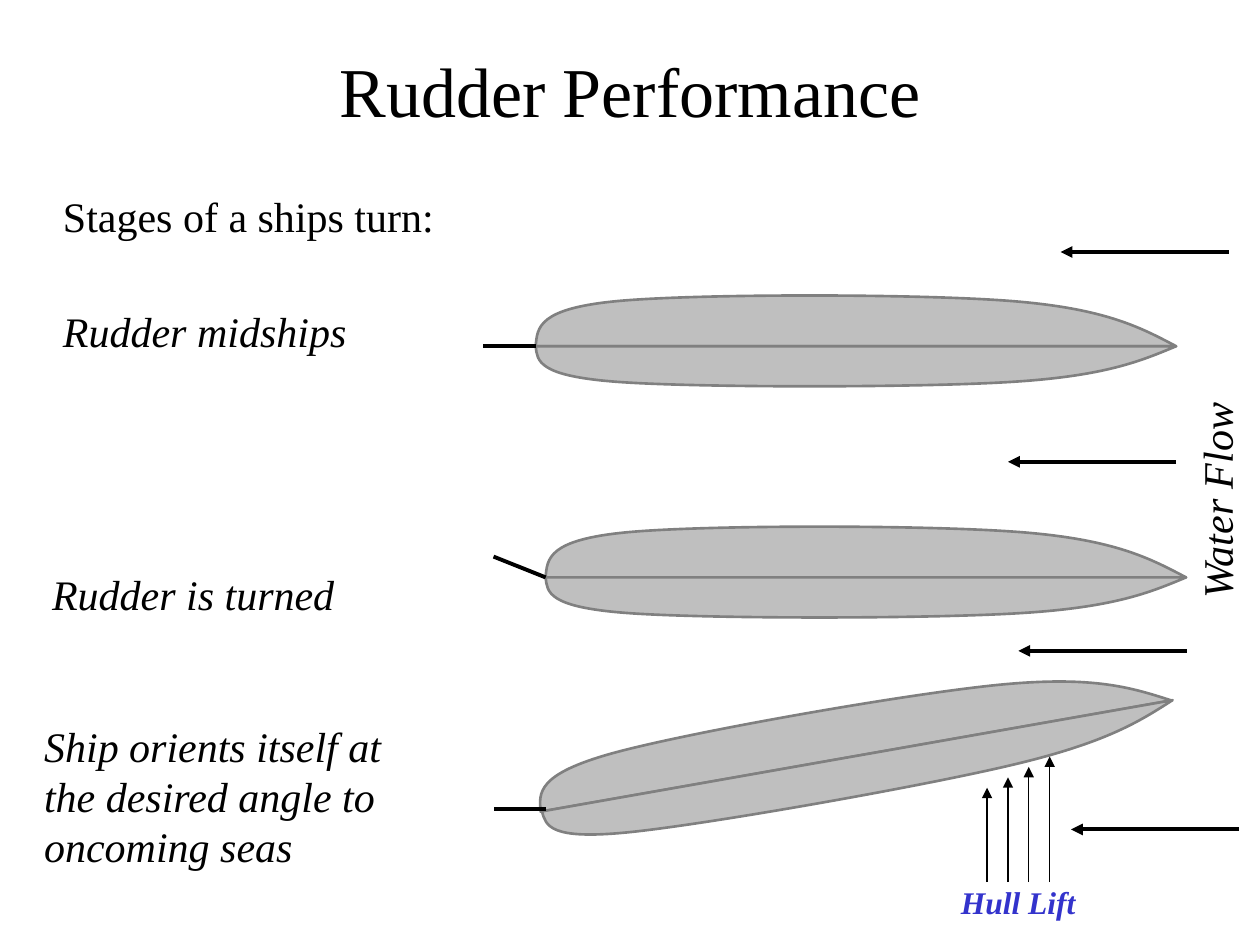
"""Build the Rudder Performance slide showing the stages of a ship's turn."""
from lxml import etree
from pptx import Presentation
from pptx.dml.color import RGBColor
from pptx.enum.shapes import MSO_CONNECTOR
from pptx.enum.text import MSO_ANCHOR, MSO_AUTO_SIZE, PP_ALIGN
from pptx.oxml.ns import qn
from pptx.util import Cm, Pt

STRAIGHT = MSO_CONNECTOR.STRAIGHT
MIDDLE, TOP = MSO_ANCHOR.MIDDLE, MSO_ANCHOR.TOP
LEFT, CENTER = PP_ALIGN.LEFT, PP_ALIGN.CENTER
FIT, NO_FIT = MSO_AUTO_SIZE.SHAPE_TO_FIT_TEXT, MSO_AUTO_SIZE.NONE

FONT = "Times New Roman"
COLORS = {"ink": "000000", "hull": "BFBFBF", "edge": "808080", "lift": "3333CC"}

BOW = (12.91, 0)
HULL_CURVES = [
    [(12.19, 0.38), (11.48, 0.76), (9.6, 0.91)],
    [(7.72, 1.06), (3.25, 1.06), (1.65, 0.91)],
    [(0.05, 0.76), (0.03, 0.38), (0, 0)],
]
PORT, STARBOARD = -1, 0.79
HALVES = [
    (10.8, 6.98, PORT, 0), (10.8, 6.98, STARBOARD, 0),
    (11, 11.64, PORT, 0), (11, 11.64, STARBOARD, 0),
    (10.71, 15.25, PORT, -10), (10.9, 15.23, STARBOARD, -10),
]
RUDDERS = [
    (10.8, 6.98, 9.74, 6.98),
    (11, 11.64, 9.95, 11.22),
    (11, 16.3, 9.95, 16.3),
]
FLOW_LENGTH = 3.39
FLOW_STARTS = [(24.98, 16.72), (23.92, 13.12), (23.71, 9.31), (24.77, 5.08)]
LIFT_X, LIFT_GAP, LIFT_BASE, LIFT_TOP, LIFT_STEP, LIFT_COUNT = 19.9, 0.42, 17.78, 15.88, 0.21, 4

LABELS = [
    ("Stages of a ships turn:", (1.02, 3.71, 7.98, 1.27), {}),
    ("Rudder midships", (1.02, 6.03, 6.22, 1.27), {"italic": True}),
    ("Rudder is turned", (0.8, 11.33, 6.2, 1.27), {"italic": True}),
    ("Water Flow", (23.88, 8.04, 1.52, 4.27), {"italic": True, "vertical": True}),
    ("Ship orients itself at the desired angle to oncoming seas",
     (0.64, 14.39, 8.08, 3.3), {"italic": True, "wrap": True}),
    ("Hull Lift", (19.12, 17.68, 2.82, 1.02),
     {"size": 18, "color": "lift", "bold": True, "italic": True}),
    ("Rudder Performance", (1.9, 0.21, 21.6, 3.18),
     {"size": 40, "wrap": True, "anchor": MIDDLE, "align": CENTER, "fit": NO_FIT}),
]


def rgb(name):
    return RGBColor.from_string(COLORS[name])


def bend(s):
    corners = list(s._element.iter(qn("a:lnTo")))
    for i in range(0, 3 * len(HULL_CURVES), 3):
        curve = etree.Element(qn("a:cubicBezTo"))
        corners[i].addprevious(curve)
        for corner in corners[i:i + 3]:
            curve.append(corner[0])
            corner.getparent().remove(corner)


def add_half(shapes, x, y, side, angle):
    outline = [BOW] + [point for curve in HULL_CURVES for point in curve] + [BOW]
    points = [(Cm(x + px), Cm(y + side * py)) for px, py in outline]
    builder = shapes.build_freeform(*points[0])
    builder.add_line_segments(points[1:], close=True)
    s = builder.convert_to_shape()
    bend(s)
    s.shadow.inherit = False
    s.fill.solid()
    s.fill.fore_color.rgb = rgb("hull")
    s.line.color.rgb = rgb("edge")
    s.line.width = Pt(1.5)
    s.rotation = angle


def add_line(shapes, x1, y1, x2, y2, width=2.25, arrow=True):
    s = shapes.add_connector(STRAIGHT, Cm(x1), Cm(y1), Cm(x2), Cm(y2))
    s.line.color.rgb = rgb("ink")
    s.line.width = Pt(width)
    sp_pr = s._element.spPr
    if arrow:
        etree.SubElement(sp_pr.find(qn("a:ln")), qn("a:tailEnd"), type="triangle")
    etree.SubElement(sp_pr, qn("a:effectLst"))


def add_label(shapes, text, box, size=24, color="ink", bold=False, italic=False,
              wrap=False, vertical=False, anchor=TOP, align=LEFT, fit=FIT):
    s = shapes.add_textbox(*map(Cm, box))
    tf = s.text_frame
    tf.word_wrap = wrap
    tf.auto_size = fit
    tf.vertical_anchor = anchor
    if vertical:
        s.rotation = 180
        s._element.txBody.find(qn("a:bodyPr")).set("vert", "eaVert")
    p = tf.paragraphs[0]
    p.alignment = align
    r = p.add_run()
    r.text = text
    r.font.name = FONT
    r.font.size = Pt(size)
    r.font.bold = bold
    r.font.italic = italic
    r.font.color.rgb = rgb(color)


def main():
    prs = Presentation()
    prs.slide_width, prs.slide_height = Cm(25.4), Cm(19.05)
    shapes = prs.slides.add_slide(prs.slide_layouts[6]).shapes
    for half in HALVES:
        add_half(shapes, *half)
    for rudder in RUDDERS:
        add_line(shapes, *rudder, arrow=False)
    for x, y in FLOW_STARTS:
        add_line(shapes, x, y, x - FLOW_LENGTH, y)
    for i in range(LIFT_COUNT):
        x = LIFT_X + i * LIFT_GAP
        add_line(shapes, x, LIFT_BASE, x, LIFT_TOP - i * LIFT_STEP, width=0.75)
    for text, box, style in LABELS:
        add_label(shapes, text, box, **style)
    prs.save("out.pptx")


if __name__ == "__main__":
    main()
